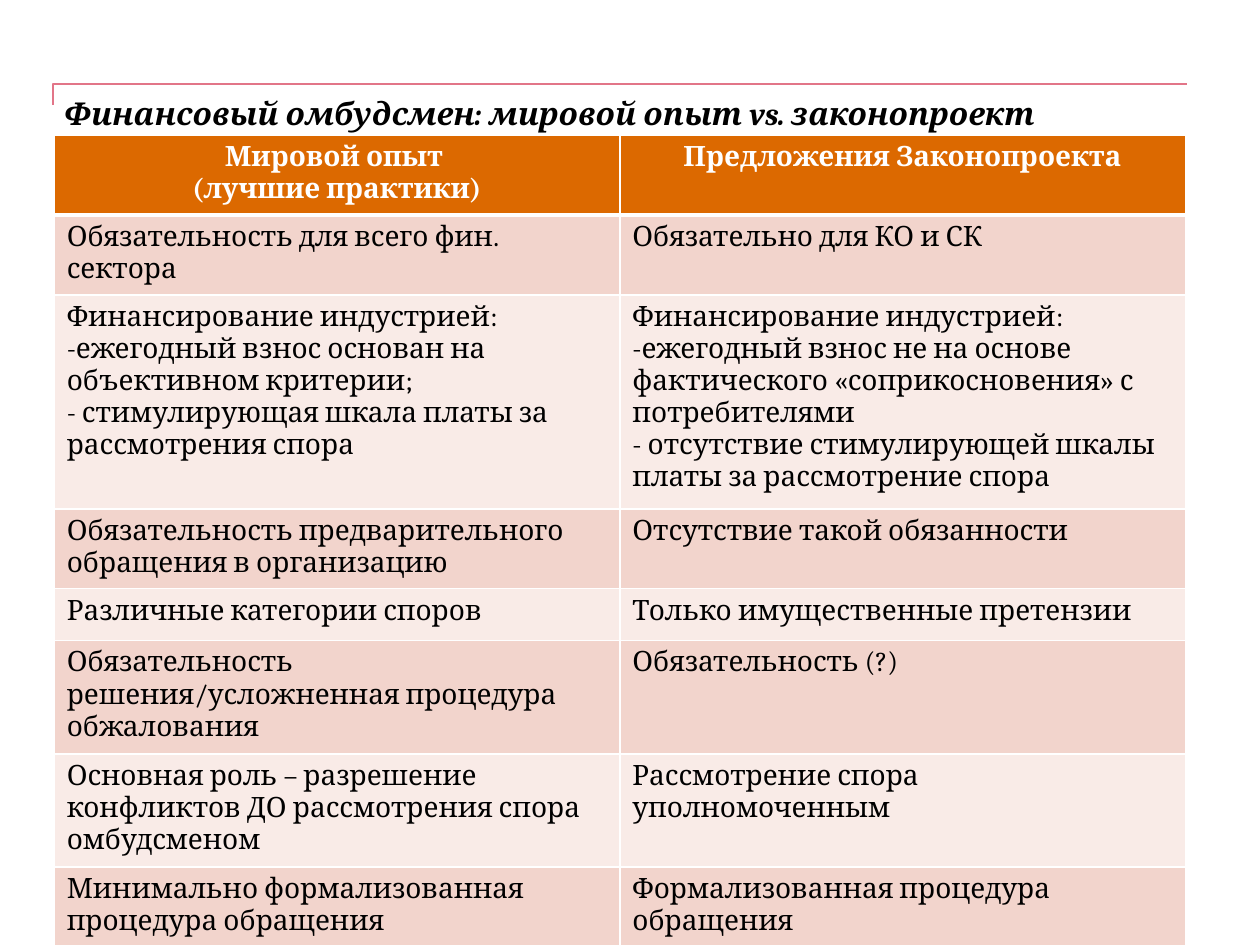
from dataclasses import dataclass

from lxml.etree import SubElement as Sub
from pptx import Presentation as Deck
from pptx.dml.color import RGBColor as Rgb
from pptx.enum.text import PP_ALIGN as Align
from pptx.oxml import parse_xml as to_xml
from pptx.oxml.ns import nsdecls, qn
from pptx.util import Inches, Pt

WIDE, HIGH = Inches(10), Inches(7.5)
BLACK = Rgb(0x00, 0x00, 0x00)
WHITE = Rgb(0xFF, 0xFF, 0xFF)
ORANGE = Rgb(0xDC, 0x69, 0x00)
ROSE = Rgb(0xE2, 0x75, 0x88)
BANDS = (Rgb(0xF9, 0xEB, 0xE7), Rgb(0xF2, 0xD4, 0xCC))
FACE = "Cambria"
HEAD = {"name": FACE, "size": Pt(16), "bold": True}
BODY = {**HEAD, "bold": False}
TITLE = {**HEAD, "size": Pt(18), "italic": True}
ROW = 0.41 / 7.5
BULLET = "-"


@dataclass
class Label:
    """A line of text, placed by shares of the slide."""
    text: str
    left: float
    top: float
    width: float
    height: float
    form: dict


HEADING = Label("Финансовый омбудсмен: мировой опыт vs. законопроект",
                0.051, 0.1, 0.891, 0.053, TITLE)

ROWS = (
    ("Мировой опыт \n(лучшие практики)", "Предложения Законопроекта"),
    ("Обязательность для всего фин. сектора", "Обязательно для КО и СК"),
    ("Финансирование индустрией:\n"
     "-ежегодный взнос основан на объективном критерии;\n"
     "- стимулирующая шкала платы за рассмотрения спора",
     "Финансирование индустрией:\n"
     "-ежегодный взнос не на основе фактического «соприкосновения» с потребителями\n"
     "- отсутствие стимулирующей шкалы платы за рассмотрение спора"),
    ("Обязательность предварительного обращения в организацию",
     "Отсутствие такой обязанности"),
    ("Различные категории споров", "Только имущественные претензии"),
    ("Обязательность решения/усложненная процедура обжалования",
     "Обязательность (?)"),
    ("Основная роль – разрешение конфликтов ДО рассмотрения спора омбудсменом",
     "Рассмотрение спора уполномоченным"),
    ("Минимально формализованная процедура обращения",
     "Формализованная процедура обращения"),
)


def across(share: float) -> int:
    """Turn a share of the width into a length."""
    return round(WIDE * share)


def down(share: float) -> int:
    """Turn a share of the height into a length."""
    return round(HIGH * share)


def write(para, text: str, form: dict, color: Rgb, align: Align) -> None:
    """Write one formatted run into a paragraph."""
    para.alignment = align
    run = para.add_run()
    run.text = text
    for key, value in form.items():
        setattr(run.font, key, value)
    run.font.color.rgb = color


def draw_label(slide, label: Label) -> None:
    """Draw a text box without margins."""
    box = slide.shapes.add_textbox(across(label.left), down(label.top),
                                   across(label.width), down(label.height))
    frame = box.text_frame
    margins = dict.fromkeys(("left", "top", "right", "bottom"), 0)
    for side, size in margins.items():
        setattr(frame, f"margin_{side}", size)
    frame.word_wrap = True
    write(frame.paragraphs[0], label.text, label.form, BLACK, Align.LEFT)


def draw_rule(slide) -> None:
    """Draw the bent line above the title."""
    left, right, top, low = across(0.042), across(0.942), down(0.089), down(0.111)
    pen = slide.shapes.build_freeform(left, low)
    pen.add_line_segments([(left, top), (right, top)], close=False)
    rule = pen.convert_to_shape()
    rule.shadow.inherit = False
    rule.fill.background()
    rule.line.color.rgb = ROSE
    rule.line.width = Pt(1)


def edge(cell, sides: dict) -> None:
    """Give a cell white borders of the given widths."""
    props = cell._tc.get_or_add_tcPr()
    for spot, (side, width) in enumerate(sides.items()):
        props.insert(spot, to_xml(
            f'<a:ln{side} {nsdecls("a")} w="{Pt(width)}"><a:solidFill>'
            f'<a:srgbClr val="{WHITE}"/></a:solidFill></a:ln{side}>'))


def fill_cell(cell, text: str, row: int) -> None:
    """Fill, edge and write one cell."""
    top = row == 0
    form, color, align = ((HEAD, WHITE, Align.CENTER) if top
                          else (BODY, BLACK, Align.LEFT))
    cell.fill.solid()
    cell.fill.fore_color.rgb = ORANGE if top else BANDS[row % 2]
    edge(cell, {"L": 1, "R": 1, "T": 3 if row == 1 else 1, "B": 3 if top else 1})
    frame = cell.text_frame
    for spot, line in enumerate(text.split("\n")):
        para = frame.add_paragraph() if spot else frame.paragraphs[0]
        write(para, line.removeprefix(BULLET), form, color, align)
        if line.startswith(BULLET):
            props = para._p.get_or_add_pPr()
            props.set("marL", "0")
            props.set("indent", "0")
            Sub(props, qn("a:buFont"), typeface=FACE)
            Sub(props, qn("a:buChar"), char=BULLET)


def draw_table(slide) -> None:
    """Draw the table of practices and proposals."""
    frame = slide.shapes.add_table(
        len(ROWS), len(ROWS[0]), across(0.043), down(0.143),
        across(0.898), down(ROW * len(ROWS)))
    frame.height = down(0.792)
    for row, texts in enumerate(ROWS):
        for col, text in enumerate(texts):
            fill_cell(frame.table.cell(row, col), text, row)


def main() -> None:
    """Build the slide and save it."""
    deck = Deck()
    deck.slide_width, deck.slide_height = WIDE, HIGH
    slide = deck.slides.add_slide(deck.slide_layouts[6])
    draw_rule(slide)
    draw_label(slide, HEADING)
    draw_table(slide)
    deck.save("out.pptx")


if __name__ == "__main__":
    main()
